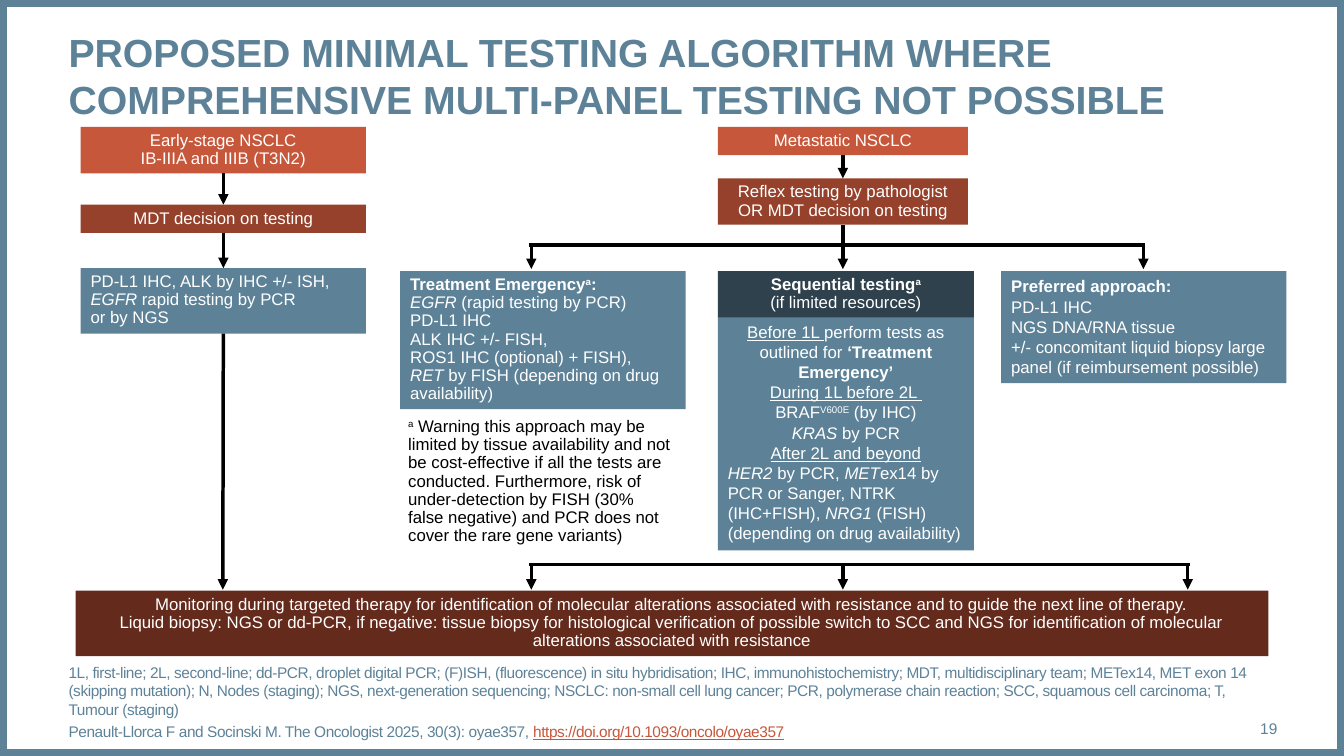
from pptx import Presentation
from pptx.dml.color import RGBColor
from pptx.enum.shapes import MSO_CONNECTOR as CONN, MSO_SHAPE as SHAPE
from pptx.enum.text import MSO_ANCHOR as ANCHOR, MSO_AUTO_SIZE as AUTO, PP_ALIGN as ALIGN
from pptx.oxml.ns import qn
from pptx.util import Inches, Pt
from lxml.etree import SubElement

HUES = {"blue": "5D8298", "navy": "2E414C", "coral": "C6573B", "rust": "95412B",
        "brown": "642B1D", "white": "FFFFFF", "black": "000000"}
RGB = {name: RGBColor.from_string(code) for name, code in HUES.items()}
LEFT, MID, RIGHT = ALIGN.LEFT, ALIGN.CENTER, ALIGN.RIGHT


def write(shape, paras, size=12, hue="white", bold=False, align=LEFT, lead=0.9,
          gap=0, anchor=ANCHOR.TOP, inset=True, track=0):
    """Fill a shape with paragraphs, each a string or a list of runs.

    A run is a string or (string, marks): b bold, i italic, u underline,
    s superscript, c coral. align is one value or one per paragraph."""
    frame = shape.text_frame
    frame.word_wrap = True
    frame.auto_size = AUTO.NONE
    frame.vertical_anchor = anchor
    if not inset:
        frame.margin_left = frame.margin_right = frame.margin_top = frame.margin_bottom = 0
    for i, runs in enumerate(paras):
        para = frame.paragraphs[0] if i == 0 else frame.add_paragraph()
        para.alignment = align[i] if isinstance(align, list) else align
        para.line_spacing = lead
        para.space_before = Pt(gap if i else 0)
        for item in [runs] if isinstance(runs, str) else runs:
            text, marks = (item, "") if isinstance(item, str) else item
            run = para.add_run()
            run.text = text
            font = run.font
            font.name, font.size = "Arial", Pt(size)
            font.color.rgb = RGB["coral" if "c" in marks else hue]
            font.bold = bold or "b" in marks
            font.italic = "i" in marks
            font.underline = "u" in marks
            props = run._r.get_or_add_rPr()
            if "s" in marks:
                props.set("baseline", "30000")
            if track:
                props.set("spc", str(track))


def link(x1, y1, x2, y2, arrow=True, start=None, end=None):
    """Draw a line, joined below the box start and above the box end if given."""
    line = slide.shapes.add_connector(CONN.STRAIGHT, *map(Inches, (x1, y1, x2, y2)))
    if start:
        line.begin_connect(boxes[start], 2)
    if end:
        line.end_connect(boxes[end], 0)
    line.line.color.rgb = RGB["black"]
    line.line.width = Pt(2.5)
    if arrow:
        SubElement(line.line._get_or_add_ln(), qn("a:tailEnd"), type="triangle")
    SubElement(line._element.spPr, qn("a:effectLst"))


deck = Presentation()
deck.slide_width, deck.slide_height = Inches(13.33), Inches(7.5)
slide = deck.slides.add_slide(deck.slide_layouts[5])

edge = slide.shapes.add_shape(SHAPE.RECTANGLE, 0, 0, deck.slide_width, deck.slide_height)
edge.shadow.inherit = False
edge.fill.background()
edge.line.color.rgb = RGB["blue"]
edge.line.width = Pt(10)

title = slide.shapes.title
title.left, title.top, title.width, title.height = map(Inches, (0.68, 0.28, 11.99, 0.94))
write(title, ["PROPOSED MINIMAL TESTING ALGORITHM WHERE COMPREHENSIVE MULTI-PANEL TESTING NOT POSSIBLE"],
      size=28, hue="blue", bold=True, lead=1, inset=False)

# name, fill, place, paragraphs, format
flow = [
    ("early", "coral", (0.8, 1.26, 2.83, 0.46),
     ["Early-stage NSCLC", "IB-IIIA and IIIB (T3N2)"], {"align": MID}),
    ("mdt", "rust", (0.8, 2.03, 2.83, 0.28), ["MDT decision on testing"], {"align": MID}),
    ("panel", "blue", (0.8, 2.66, 2.83, 0.65),
     ["PD-L1 IHC, ALK by IHC +/- ISH,", [("EGFR", "i"), " rapid testing by PCR"], "or by NGS"], {}),
    ("meta", "coral", (7.12, 1.26, 2.48, 0.28), ["Metastatic NSCLC"],
     {"align": MID, "anchor": ANCHOR.MIDDLE}),
    ("reflex", "rust", (7.12, 1.77, 2.48, 0.46),
     ["Reflex testing by pathologist OR MDT decision on testing"], {"align": MID}),
    ("urgent", "blue", (3.97, 2.69, 2.83, 1.37),
     [[("Treatment Emergency", "b"), ("a", "bs"), (":", "b")],
      [("EGFR", "i"), " (rapid testing by PCR)"], "PD-L1 IHC", "ALK IHC +/- FISH,",
      "ROS1 IHC (optional) + FISH),",
      [("RET", "i"), " by FISH (depending on drug availability)"]], {}),
    ("steps", "blue", (7.12, 3.14, 2.54, 2.32),
     [[("Before 1L ", "u"), "perform tests as outlined for ", ("‘Treatment Emergency’", "b")],
      [("During 1L before 2L ", "u")],
      ["BRAF", ("V600E", "s"), " (by IHC)"],
      [("KRAS", "i"), " by PCR"],
      [("After 2L and beyond", "u")],
      [("HER2 ", "i"), "by PCR, ", ("MET", "i"), "ex14 by PCR or Sanger, NTRK (IHC+FISH), ",
       ("NRG1 ", "i"), "(FISH)"],
      "(depending on drug availability)"], {"align": [MID] * 5 + [LEFT] * 2, "lead": 1}),
    ("head", "navy", (7.12, 2.69, 2.54, 0.46),
     [[("Sequential testing", "b"), ("a", "bs")], "(if limited resources)"], {"align": MID}),
    ("best", "blue", (9.93, 2.69, 2.83, 1.11),
     [[("Preferred approach:", "b")], "PD-L1 IHC", "NGS DNA/RNA tissue",
      "+/- concomitant liquid biopsy large panel (if reimbursement possible)"], {"lead": 1}),
    ("watch", "brown", (0.75, 5.86, 11.83, 0.65),
     ["Monitoring during targeted therapy for identification of molecular alterations associated "
      "with resistance and to guide the next line of therapy.",
      "Liquid biopsy: NGS or dd-PCR, if negative: tissue biopsy for histological verification of "
      "possible switch to SCC and NGS for identification of molecular alterations associated "
      "with resistance"], {"align": MID}),
]
boxes = {}
for name, fill, place, paras, form in flow:
    box = boxes[name] = slide.shapes.add_shape(SHAPE.RECTANGLE, *map(Inches, place))
    box.shadow.inherit = False
    box.fill.solid()
    box.fill.fore_color.rgb = RGB[fill]
    box.line.fill.background()
    write(box, paras, **form)

notes = [
    ((3.95, 4.1, 2.83, 1.37),
     [[("a", "s"), " Warning this approach may be limited by tissue availability and not be "
       "cost-effective if all the tests are conducted. Furthermore, risk of under-detection by "
       "FISH (30% false negative) and PCR does not cover the rare gene variants)"]],
     {"hue": "black"}),
    ((0.68, 6.95, 11.99, 0.4),
     ["1L, first-line; 2L, second-line; dd-PCR, droplet digital PCR; (F)ISH, (fluorescence) in situ "
      "hybridisation; IHC, immunohistochemistry; MDT, multidisciplinary team; METex14, MET exon 14 "
      "(skipping mutation); N, Nodes (staging); NGS, next-generation sequencing; NSCLC: non-small "
      "cell lung cancer; PCR, polymerase chain reaction; SCC, squamous cell carcinoma; T, Tumour "
      "(staging)",
      ["Penault-Llorca F and Socinski M. The Oncologist 2025, 30(3): oyae357, ",
       ("https://doi.org/10.1093/oncolo/oyae357", "uc")]],
     {"size": 11, "hue": "blue", "lead": 1, "gap": 3, "anchor": ANCHOR.BOTTOM,
      "inset": False, "track": -30}),
    ((11.81, 7.03, 0.86, 0.4), ["19"],
     {"size": 11, "hue": "blue", "align": RIGHT, "lead": 1, "anchor": ANCHOR.MIDDLE,
      "inset": False}),
]
for place, paras, form in notes:
    write(slide.shapes.add_textbox(*map(Inches, place)), paras, **form)

link(2.21, 1.72, 2.21, 2.03, start="early", end="mdt")
link(2.21, 2.31, 2.21, 2.66, start="mdt", end="panel")
link(2.21, 3.31, 2.21, 5.85, start="panel")
link(8.36, 1.54, 8.36, 1.77, start="meta", end="reflex")
link(8.36, 2.23, 8.36, 2.67, start="reflex")
link(5.25, 2.43, 11.36, 2.43, arrow=False)
link(5.25, 5.6, 11.8, 5.6, arrow=False)
for x in (5.27, 11.34):
    link(x, 2.43, x, 2.67)
for x in (5.27, 8.36, 11.78):
    link(x, 5.61, x, 5.85)

deck.save("out.pptx")
